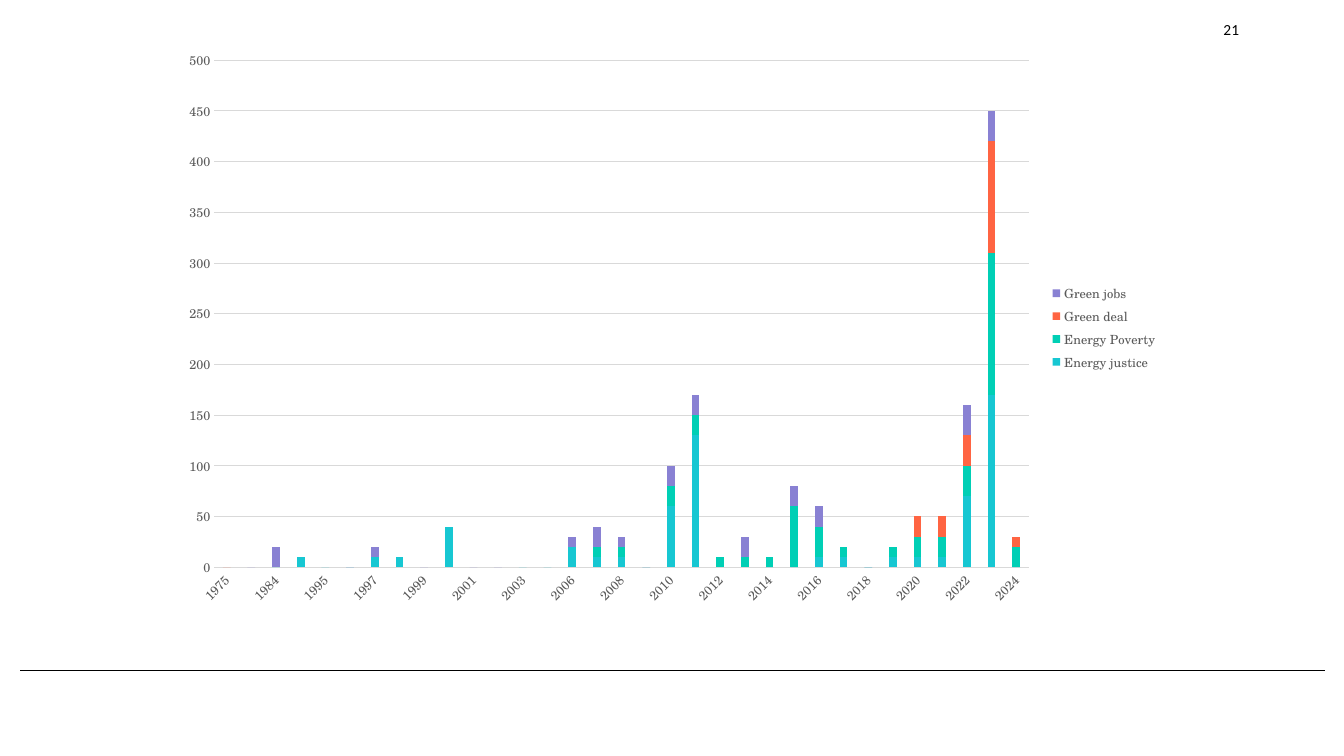
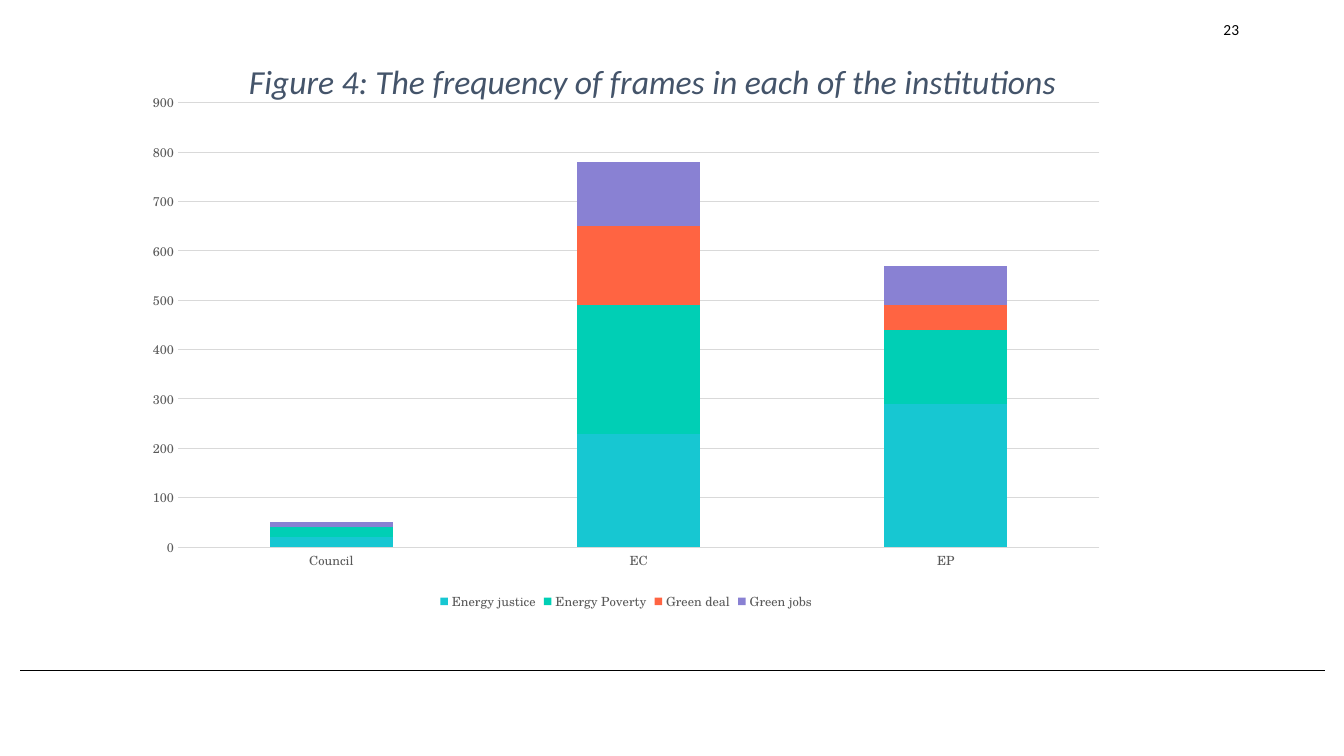
from lxml import etree
from pptx import Presentation
from pptx import util as u
from pptx.chart.data import CategoryChartData
from pptx.dml.color import RGBColor
from pptx.enum import chart as ch
from pptx.enum import shapes, text
from pptx.oxml.ns import qn

BLACK, GREY, GRID, TITLE = "000000", "595959", "D9D9D9", "44546A"
BODY_FONT, CHART_FONT = "Calibri", "TeX Gyre Schola"
FRAMES = [("Energy justice", "17C7D2"), ("Energy Poverty", "00CFB5"),
          ("Green deal", "FF6442"), ("Green jobs", "8981D3")]

# Each row: category, then one value per frame.
BY_YEAR = [
    ("1975", None, None, 0, None),
    ("1979", None, None, None, 0),
    ("1984", 0, None, None, 20),
    ("1993", 10, None, None, 0),
    ("1995", 0, None, None, None),
    ("1996", 0, None, None, 0),
    ("1997", 10, 0, None, 10),
    ("1998", 10, None, None, 0),
    ("1999", None, None, None, 0),
    ("2000", 40, 0, None, None),
    ("2001", None, None, None, 0),
    ("2002", None, None, None, 0),
    ("2003", 0, None, None, None),
    ("2004", 0, None, None, None),
    ("2006", 20, 0, None, 10),
    ("2007", 10, 10, None, 20),
    ("2008", 10, 10, None, 10),
    ("2009", None, 0, None, 0),
    ("2010", 60, 20, None, 20),
    ("2011", 130, 20, None, 20),
    ("2012", None, 10, None, 0),
    ("2013", None, 10, 0, 20),
    ("2014", 0, 10, None, 0),
    ("2015", 0, 60, 0, 20),
    ("2016", 10, 30, 0, 20),
    ("2017", 10, 10, 0, 0),
    ("2018", 0, 0, None, 0),
    ("2019", 10, 10, 0, None),
    ("2020", 10, 20, 20, 0),
    ("2021", 10, 20, 20, 0),
    ("2022", 70, 30, 30, 30),
    ("2023", 170, 140, 110, 30),
    ("2024", 0, 20, 10, 0),
]
BY_INSTITUTION = [
    ("Council", 20, 20, None, 10),
    ("EC", 230, 260, 160, 130),
    ("EP", 290, 150, 50, 80),
]
SLIDES = [
    dict(number="21", title=None,
         chart=dict(rows=BY_YEAR, at=(1.68, 0.39, 9.9, 5.72), top=500, step=50,
                    gap=219, legend=ch.XL_LEGEND_POSITION.RIGHT)),
    dict(number="23",
         title="Figure 4: The frequency of frames in each of the institutions",
         chart=dict(rows=BY_INSTITUTION, at=(1.32, 0.82, 9.78, 5.28), top=900, step=100,
                    gap=150, legend=ch.XL_LEGEND_POSITION.BOTTOM)),
]


def rgb(value):
    return RGBColor.from_string(value)


def inches(values):
    return [u.Inches(value) for value in values]


def set_font(font, size, color, name, italic=None):
    font.size, font.name, font.italic = u.Pt(size), name, italic
    font.color.rgb = rgb(color)


def add_text(page, words, at, size, color=BLACK, italic=None, align=text.PP_ALIGN.LEFT,
             anchor=text.MSO_ANCHOR.TOP, insets=(0.1, 0.05, 0.1, 0.05), wrap=True):
    frame = page.shapes.add_textbox(*inches(at)).text_frame
    frame.word_wrap, frame.vertical_anchor = wrap, anchor
    (frame.margin_left, frame.margin_top,
     frame.margin_right, frame.margin_bottom) = inches(insets)
    para = frame.paragraphs[0]
    para.alignment = align
    span = para.add_run()
    span.text = words
    set_font(span.font, size, color, BODY_FONT, italic)


def add_footer_line(page):
    line = page.shapes.add_connector(shapes.MSO_CONNECTOR.STRAIGHT,
                                     *inches((0.2, 6.65, 13.14, 6.65)))
    line.line.color.rgb = rgb(BLACK)
    line.line.width = u.Pt(0.5)
    etree.SubElement(line._element.spPr, qn("a:effectLst"))


def style_axis(axis):
    axis.major_tick_mark = axis.minor_tick_mark = ch.XL_TICK_MARK.NONE
    set_font(axis.tick_labels.font, 9, GREY, CHART_FONT)


def style_line(line):
    line.color.rgb = rgb(GRID)
    line.width = u.Pt(0.75)


def add_stacked_chart(page, rows, at, top, step, gap, legend):
    categories, *columns = zip(*rows)
    data = CategoryChartData(number_format="General")
    data.categories = categories
    for (name, _), values in zip(FRAMES, columns):
        data.add_series(name, values)
    chart = page.shapes.add_chart(ch.XL_CHART_TYPE.COLUMN_STACKED, *inches(at), data).chart
    chart.has_title = False
    set_font(chart.font, 10, BLACK, CHART_FONT)

    plot = chart.plots[0]
    plot.gap_width, plot.overlap, plot.vary_by_categories = gap, 100, False
    for series, (_, color) in zip(plot.series, FRAMES):
        series.format.fill.solid()
        series.format.fill.fore_color.rgb = rgb(color)

    groups, counts = chart.category_axis, chart.value_axis
    style_axis(groups)
    style_axis(counts)
    style_line(groups.format.line)
    counts.format.line.fill.background()
    counts.has_major_gridlines = True
    style_line(counts.major_gridlines.format.line)
    counts.minimum_scale, counts.maximum_scale, counts.major_unit = 0, top, step

    chart.has_legend = True
    chart.legend.position = legend
    chart.legend.include_in_layout = False
    set_font(chart.legend.font, 9, GREY, CHART_FONT)


def main():
    deck = Presentation()
    deck.slide_width, deck.slide_height = inches((13.33, 7.5))
    for content in SLIDES:
        page = deck.slides.add_slide(deck.slide_layouts[6])
        add_footer_line(page)
        add_text(page, content["number"], (11.82, 0.01, 0.47, 0.39), 11,
                 align=text.PP_ALIGN.RIGHT, insets=(0, 0.2, 0, 0), wrap=False)
        add_stacked_chart(page, **content["chart"])
        if content["title"]:
            add_text(page, content["title"], (2.37, 0.55, 8.6, 0.5), 24, TITLE,
                     italic=True, anchor=text.MSO_ANCHOR.MIDDLE)
    deck.save("out.pptx")


if __name__ == "__main__":
    main()
